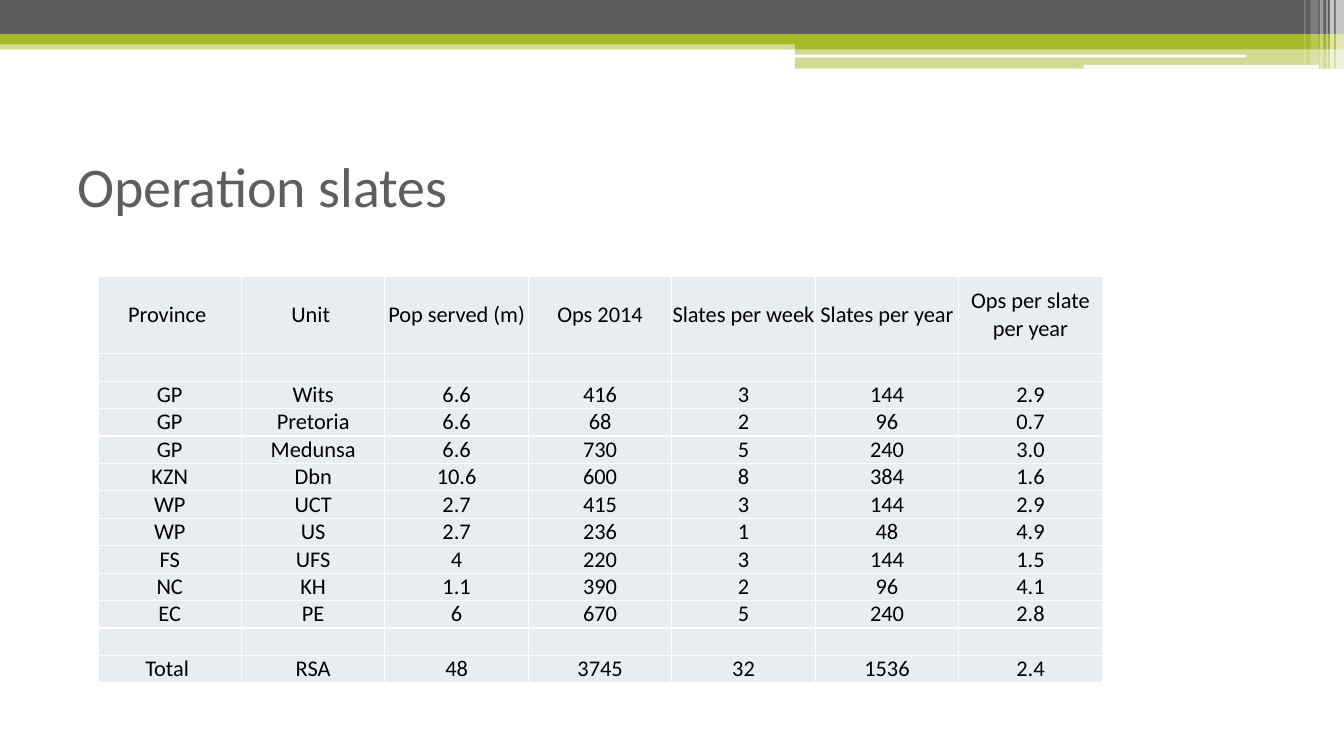
"""Build the operation slates slide: banded header, title and table."""
from dataclasses import dataclass

from lxml import etree
from pptx import Presentation
from pptx import util as u
from pptx.dml.color import RGBColor
from pptx.enum import shapes, text
from pptx.oxml import ns
from pptx.slide import Slide
from pptx.table import _Cell as Cell


@dataclass(frozen=True)
class Theme:
    font: str = "Calibri"
    grey: str = "5E5E5E"
    green: str = "A6B727"
    white: str = "FFFFFF"
    black: str = "000000"
    pale: str = "E9EDF2"
    head: float = 40
    body: float = 16


@dataclass(frozen=True)
class Bar:
    left: float
    top: float
    width: float
    height: float
    color: str
    alpha: int = 100
    soft: bool = False


LOOK = Theme()
WIDE, HIGH = 960, 540
HALF = 568
BARS = [
    Bar(0, 28.8, WIDE, 6.5, LOOK.green, 50),
    Bar(0, 0, WIDE, 24.5, LOOK.grey),
    Bar(0, 24.5, WIDE, 7.2, LOOK.green),
    Bar(HALF, 28, WIDE - HALF, 7.2, LOOK.green),
    Bar(HALF, 35, WIDE - HALF, 14, LOOK.green, 50),
    Bar(HALF, 39, 322, 2, LOOK.white, soft=True),
    Bar(774, 46.4, 168, 2.6, LOOK.white, soft=True),
    Bar(954, 0, 6, 49, LOOK.white, 65),
    Bar(950, 0, 3, 49, LOOK.white, 65),
    Bar(947.5, 0, 0.8, 49, LOOK.white, 60),
    Bar(942.8, 0, 2.6, 49, LOOK.white, 40),
    Bar(936, 0, 5.8, 46, LOOK.white, 20),
    Bar(931.7, 0, 0.8, 46, LOOK.white, 30),
]
HEAD = ("Province ", "Unit ", "Pop served (m)", "Ops 2014", "Slates per week",
        "Slates per year", "Ops per slate per year")
GAP = ("",) * len(HEAD)
ROWS = [
    HEAD,
    GAP,
    ("GP", "Wits", "6.6", "416", "3", "144", "2.9"),
    ("GP", "Pretoria", "6.6", "68", "2", "96", "0.7"),
    ("GP", "Medunsa", "6.6", "730", "5", "240", "3.0"),
    ("KZN", "Dbn", "10.6", "600", "8", "384", "1.6"),
    ("WP", "UCT", "2.7", "415", "3", "144", "2.9"),
    ("WP", "US", "2.7", "236", "1", "48", "4.9"),
    ("FS", "UFS", "4", "220", "3", "144", "1.5"),
    ("NC", "KH", "1.1", "390", "2", "96", "4.1"),
    ("EC", "PE", "6", "670", "5", "240", "2.8"),
    GAP,
    ("Total ", "RSA", "48", "3745", "32", "1536", "2.4"),
]
MID_COLS = (4, 6)
HEAD_H, ROW_H, COL_W = 55.4, 19.2, 102.5


def style(para: text, size: float, color: str) -> None:
    """Set the font of a whole paragraph."""
    font = para.font
    font.name, font.size = LOOK.font, u.Pt(size)
    font.color.rgb = RGBColor.from_string(color)


def draw_bar(slide: Slide, bar: Bar) -> None:
    """Draw one header bar."""
    kind = shapes.MSO_SHAPE.ROUNDED_RECTANGLE if bar.soft else shapes.MSO_SHAPE.RECTANGLE
    shape = slide.shapes.add_shape(
        kind, u.Pt(bar.left), u.Pt(bar.top), u.Pt(bar.width), u.Pt(bar.height))
    shape.shadow.inherit = False
    shape.line.fill.background()
    shape.fill.solid()
    shape.fill.fore_color.rgb = RGBColor.from_string(bar.color)
    if bar.alpha < 100:
        tint = shape.element.spPr.find(".//" + ns.qn("a:srgbClr"))
        etree.SubElement(tint, ns.qn("a:alpha"), val=str(bar.alpha * 1000))


def draw_edge(cell: Cell) -> None:
    """Give a cell a thin white line on each side."""
    props = cell._tc.get_or_add_tcPr()
    for spot, side in enumerate(("lnL", "lnR", "lnT", "lnB")):
        line = etree.Element(ns.qn(f"a:{side}"), w=str(u.Pt(1)))
        fill = etree.SubElement(line, ns.qn("a:solidFill"))
        etree.SubElement(fill, ns.qn("a:srgbClr"), val=LOOK.white)
        props.insert(spot, line)


def fill_cell(cell: Cell, word: str, mid: bool) -> None:
    """Write and format one table cell."""
    cell.margin_left = cell.margin_right = cell.margin_top = cell.margin_bottom = 0
    cell.vertical_anchor = text.MSO_ANCHOR.MIDDLE if mid else text.MSO_ANCHOR.BOTTOM
    cell.fill.solid()
    cell.fill.fore_color.rgb = RGBColor.from_string(LOOK.pale)
    draw_edge(cell)
    para = cell.text_frame.paragraphs[0]
    para.alignment = text.PP_ALIGN.CENTER
    style(para, LOOK.body, LOOK.black)
    if word:
        para.text = word
    else:
        etree.SubElement(para._p, ns.qn("a:endParaRPr"), sz=str(int(LOOK.body * 100)))


def draw_table(slide: Slide) -> None:
    """Draw the table of slates."""
    tall = HEAD_H + ROW_H * (len(ROWS) - 1)
    table = slide.shapes.add_table(
        len(ROWS), len(HEAD), u.Pt(70), u.Pt(197.3),
        u.Pt(COL_W * len(HEAD)), u.Pt(tall)).table
    table.first_row = table.horz_banding = False
    for col in table.columns:
        col.width = u.Pt(COL_W)
    for r, words in enumerate(ROWS):
        table.rows[r].height = u.Pt(ROW_H if r else HEAD_H)
        for c, word in enumerate(words):
            fill_cell(table.cell(r, c), word, r == 0 or c in MID_COLS)


def draw_title(slide: Slide) -> None:
    """Place the title."""
    title = slide.shapes.title
    title.left, title.top = u.Pt(48), u.Pt(90)
    title.width, title.height = u.Pt(864), u.Pt(84)
    frame = title.text_frame
    frame.text = "Operation slates"
    frame.auto_size = text.MSO_AUTO_SIZE.NONE
    frame.vertical_anchor = text.MSO_ANCHOR.MIDDLE
    para = frame.paragraphs[0]
    para.alignment = text.PP_ALIGN.LEFT
    style(para, LOOK.head, LOOK.grey)


def main() -> None:
    """Build and save the deck."""
    deck = Presentation()
    deck.slide_width, deck.slide_height = u.Pt(WIDE), u.Pt(HIGH)
    slide = deck.slides.add_slide(deck.slide_layouts[5])
    for bar in BARS:
        draw_bar(slide, bar)
    draw_table(slide)
    draw_title(slide)
    deck.save("out.pptx")


if __name__ == "__main__":
    main()
